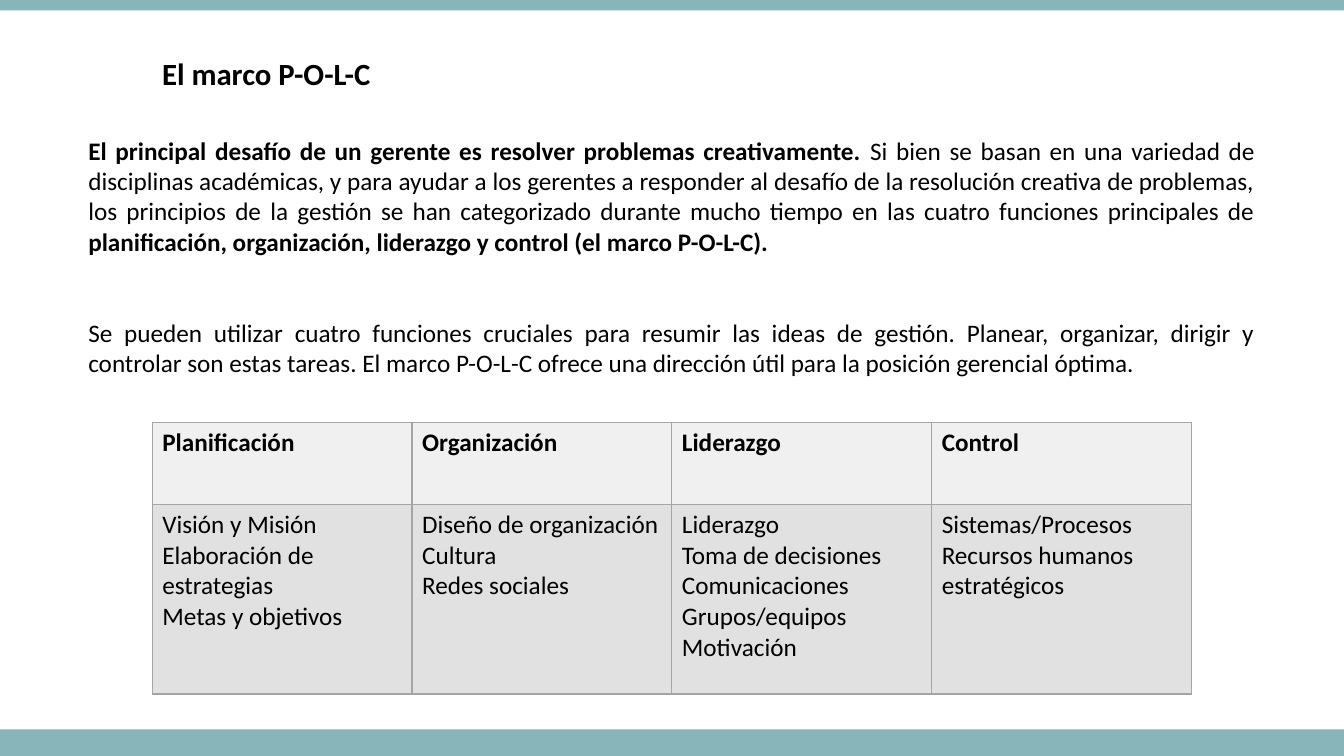
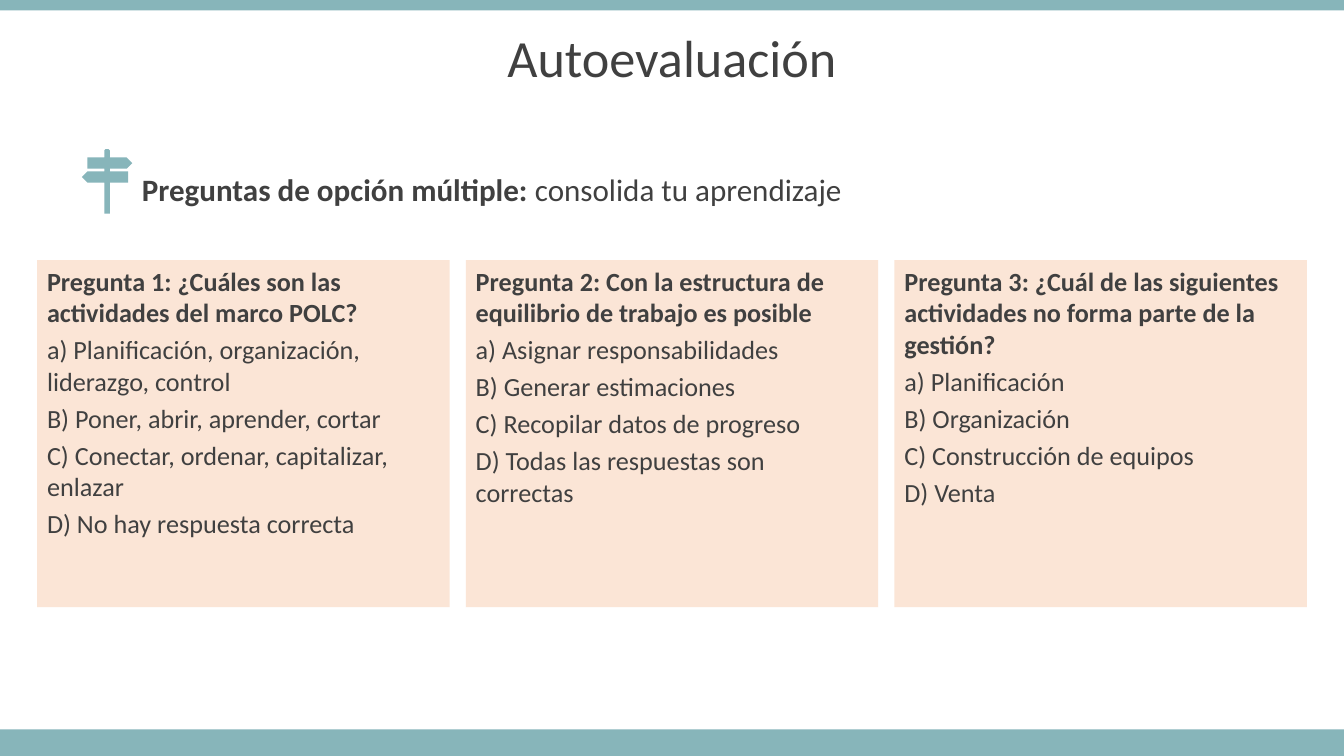
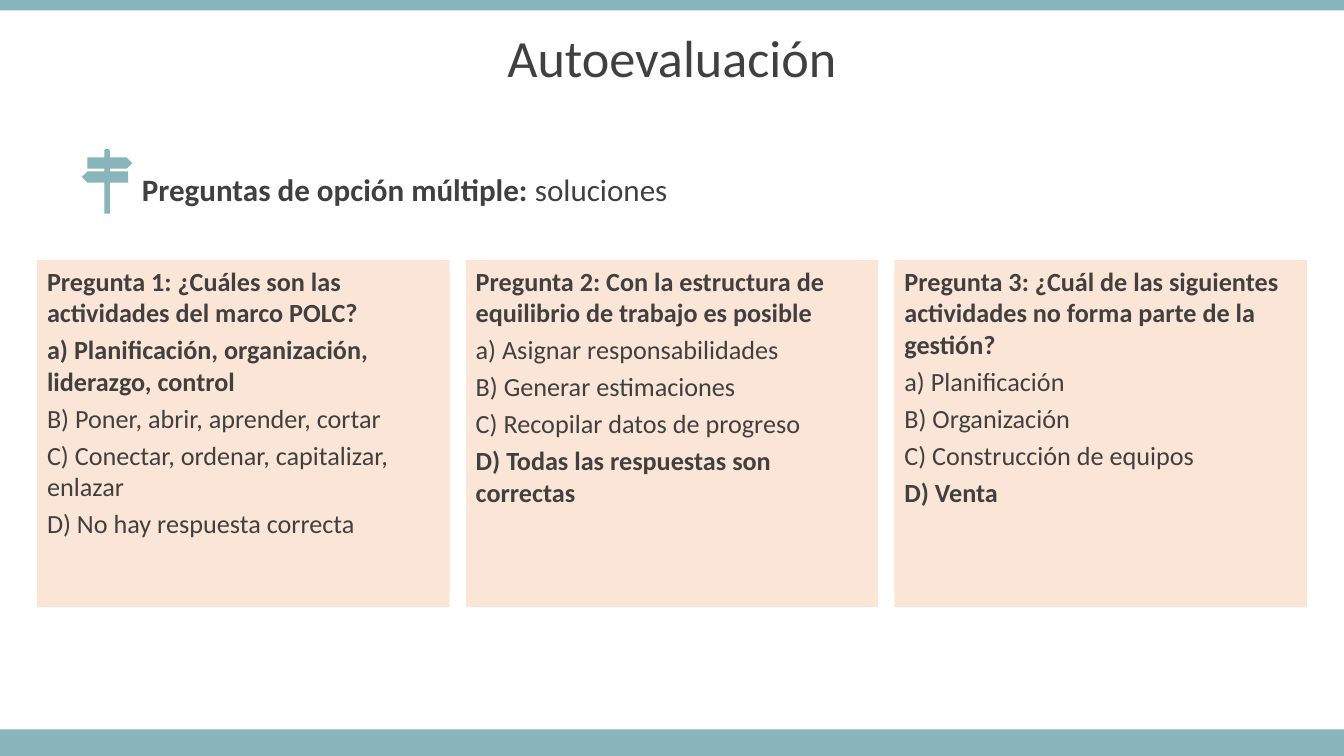
import math
import pptx
import pptx.util
import pptx.dml.color
import pptx.enum.shapes
import pptx.enum.text
import pptx.oxml.ns
import lxml.etree

Pt = pptx.util.Pt
ALIGN = pptx.enum.text.PP_ALIGN
WIDE, HIGH = 960, 540
FONT = "Calibri"
INK = {
    "band": "87B5BA", "black": "000000", "gray": "404040", "card": "FBE5D6",
    "head": "F0F0F0", "body": "E1E1E1", "rule": "A5A5A5",
}
POLC = {
    "Planificación": ["Visión y Misión", "Elaboración de estrategias", "Metas y objetivos"],
    "Organización": ["Diseño de organización", "Cultura", "Redes sociales"],
    "Liderazgo": ["Liderazgo", "Toma de decisiones", "Comunicaciones", "Grupos/equipos", "Motivación"],
    "Control": ["Sistemas/Procesos", "Recursos humanos estratégicos"],
}
INTRO = [
    [("El principal desafío de un gerente es resolver problemas creativamente. ", True),
     ("Si bien se basan en una variedad de disciplinas académicas, y para ayudar a los gerentes "
      "a responder al desafío de la resolución creativa de problemas, los principios de la gestión "
      "se han categorizado durante mucho tiempo en las cuatro funciones principales de ", False),
     ("planificación, organización, liderazgo y control (el marco P-O-L-C).", True)],
    [("Se pueden utilizar cuatro funciones cruciales para resumir las ideas de gestión. "
      "Planear, organizar, dirigir y controlar son estas tareas. El marco P-O-L-C ofrece una "
      "dirección útil para la posición gerencial óptima.", False)],
]
QUIZ = [
    ("Pregunta 1: ¿Cuáles son las actividades del marco POLC?",
     ["a) Planificación, organización, liderazgo, control", "B) Poner, abrir, aprender, cortar",
      "C) Conectar, ordenar, capitalizar, enlazar", "D) No hay respuesta correcta"], 0),
    ("Pregunta 2: Con la estructura de equilibrio de trabajo es posible",
     ["a) Asignar responsabilidades", "B) Generar estimaciones",
      "C) Recopilar datos de progreso", "D) Todas las respuestas son correctas"], 3),
    ("Pregunta 3: ¿Cuál de las siguientes actividades no forma parte de la gestión?",
     ["a) Planificación", "B) Organización", "C) Construcción de equipos", "D) Venta"], 3),
]


def paint(fill, name):
    fill.solid()
    fill.fore_color.rgb = pptx.dml.color.RGBColor.from_string(INK[name])


def plain(shape, name):
    shape.shadow.inherit = False
    paint(shape.fill, name)
    shape.line.fill.background()
    return shape


def block(slide, box, name):
    kind = pptx.enum.shapes.MSO_SHAPE.RECTANGLE
    return plain(slide.shapes.add_shape(kind, *map(Pt, box)), name)


def write(frame, paras, size, ink, align=ALIGN.LEFT, gap=0, lead=1.0):
    frame.word_wrap = True
    for i, runs in enumerate(paras):
        para = frame.paragraphs[0] if i == 0 else frame.add_paragraph()
        para.alignment = align
        para.space_before = Pt(gap)
        para.line_spacing = lead
        for text, bold in runs:
            run = para.add_run()
            run.text = text
            run.font.name = FONT
            run.font.size = Pt(size)
            run.font.bold = bold
            run.font.color.rgb = pptx.dml.color.RGBColor.from_string(INK[ink])


def label(slide, box, paras, size, ink, middle=False, **style):
    frame = slide.shapes.add_textbox(*map(Pt, box)).text_frame
    anchor = pptx.enum.text.MSO_ANCHOR
    frame.vertical_anchor = anchor.MIDDLE if middle else anchor.TOP
    write(frame, paras, size, ink, **style)


def edge(cell):
    props = cell._tc.get_or_add_tcPr()
    qn = pptx.oxml.ns.qn
    for side in ("lnL", "lnR", "lnT", "lnB"):
        line = lxml.etree.SubElement(props, qn("a:" + side), w=str(Pt(1)))
        fill = lxml.etree.SubElement(line, qn("a:solidFill"))
        lxml.etree.SubElement(fill, qn("a:srgbClr"), val=INK["rule"])


def grid(slide, box, rows):
    table = slide.shapes.add_table(len(rows), len(POLC), *map(Pt, box)).table
    table.first_row = table.horz_banding = False
    for row, tall in zip(table.rows, rows):
        row.height = Pt(tall)
    for col, (head, items) in enumerate(POLC.items()):
        table.columns[col].width = Pt(box[2] / len(POLC))
        parts = [("head", [head], True), ("body", items, False)]
        for row, (name, lines, bold) in enumerate(parts):
            cell = table.cell(row, col)
            edge(cell)
            paint(cell.fill, name)
            write(cell.text_frame, [[(line, bold)] for line in lines], 18, "black")


def sign(slide, x, y):
    mid, half = 18, 2.5
    left, right = mid - half, mid + half
    cap = [(mid - half * math.cos(math.pi * k / 8), half - half * math.sin(math.pi * k / 8))
           for k in range(9)]
    east = [(right, 6), (32.5, 6), (36, 9.75), (32.5, 13.5), (right, 13.5)]
    low = [(right, 16), (33, 16), (33, 24), (right, 24), (right, 46), (left, 46),
           (left, 24), (4, 24), (0, 20), (4, 16), (left, 16)]
    west = [(left, 13.5), (3.5, 13.5), (3.5, 6), (left, 6)]
    path = slide.shapes.build_freeform(*cap[0], scale=Pt(1))
    path.add_line_segments(cap[1:] + east + low + west, close=True)
    plain(path.convert_to_shape(Pt(x), Pt(y)), "band")


def card(slide, box, quiz, solved):
    ask, options, right = quiz
    frame = block(slide, box, "card").text_frame
    frame.vertical_anchor = pptx.enum.text.MSO_ANCHOR.TOP
    paras = [[(ask, True)]]
    paras += [[(text, solved and i == right)] for i, text in enumerate(options)]
    write(frame, paras, 18.7, "gray", gap=4)


def base(deck):
    slide = deck.slides.add_slide(deck.slide_layouts[6])
    block(slide, (0, 521, WIDE, 19), "band")
    block(slide, (0, 0, WIDE, 7.5), "band")
    return slide


def frame_slide(deck):
    slide = base(deck)
    label(slide, (56, 93, 847.5, 181), INTRO, 18, "black", align=ALIGN.JUSTIFY, gap=43.5)
    grid(slide, (108.75, 301.75, 742.4, 194), (58.5, 135.5))
    label(slide, (108.75, 35.5, 466.5, 34), [[("El marco P-O-L-C", True)]], 22, "black")


def quiz_slide(deck, note, solved):
    slide = base(deck)
    label(slide, (0, 13, WIDE, 60.5), [[("Autoevaluación", False)]], 37.3, "gray",
          middle=True, align=ALIGN.CENTER, gap=10, lead=0.9)
    label(slide, (94.25, 123, 642, 29.5),
          [[("Preguntas de opción múltiple: ", True), (note, False)]], 22.2, "gray",
          middle=True, gap=10, lead=0.8)
    sign(slide, 58.5, 106.5)
    side, wide, gap = 26.5, 294.6, 11.6
    for i, quiz in enumerate(QUIZ):
        card(slide, (side + i * (wide + gap), 185.75, wide, 248), quiz, solved)


def main():
    deck = pptx.Presentation()
    deck.slide_width, deck.slide_height = Pt(WIDE), Pt(HIGH)
    frame_slide(deck)
    quiz_slide(deck, "consolida tu aprendizaje", False)
    quiz_slide(deck, "soluciones", True)
    deck.save("out.pptx")


if __name__ == "__main__":
    main()
